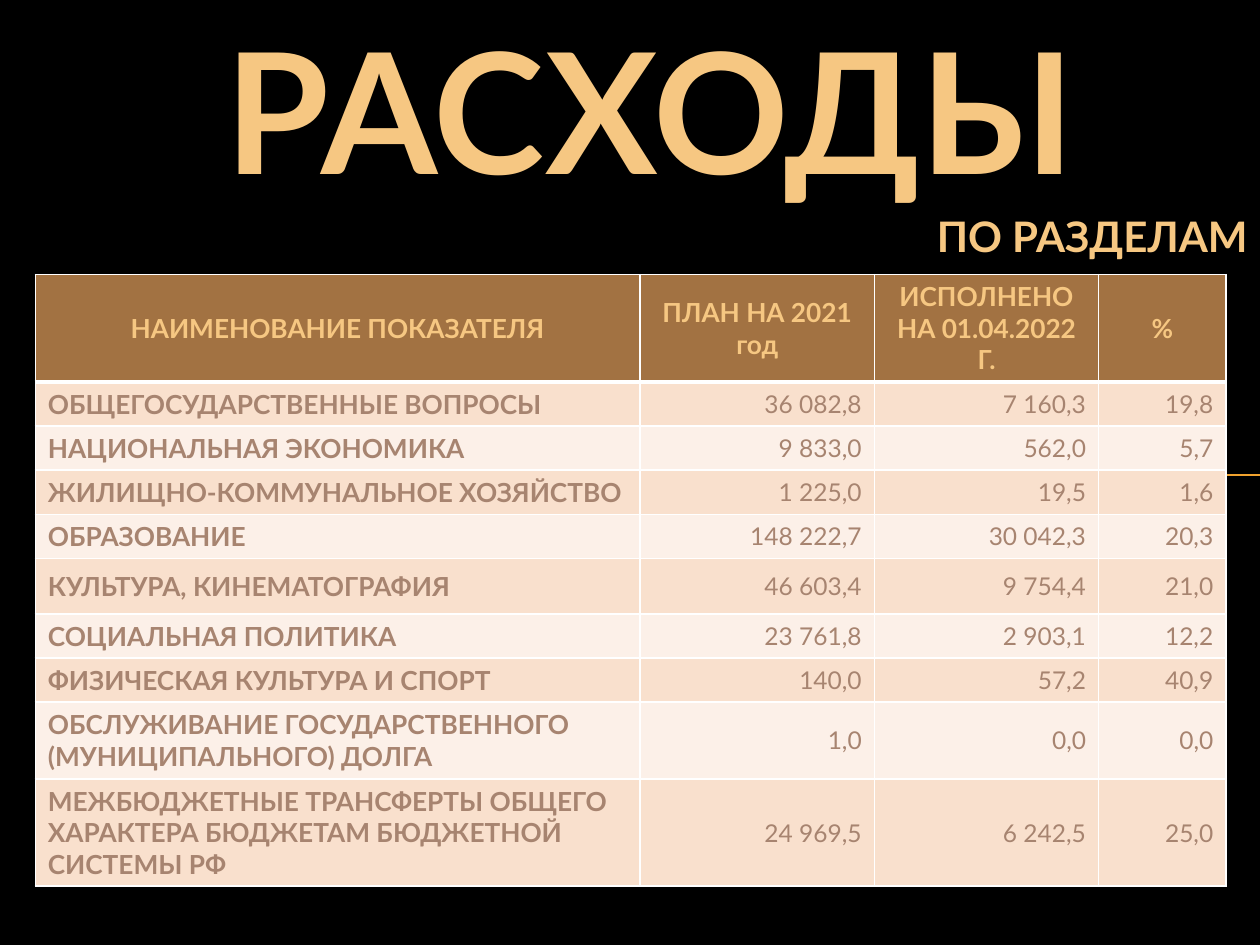
from dataclasses import dataclass

from lxml import etree
from pptx import Presentation
from pptx import util as u
from pptx.dml.color import RGBColor
from pptx.enum import shapes, text
from pptx.oxml.ns import qn


@dataclass(frozen=True)
class Theme:
    font: str = "Lato"
    background: str = "000000"
    gold: str = "F6C782"
    rule: str = "F0A22E"
    header: str = "A27242"
    body: str = "A78470"
    bands: tuple = ("F9E0CD", "FCF0E8")
    border: str = "FFFFFF"
    title_size: int = 96
    subtitle_size: int = 24
    label_size: int = 15
    value_size: int = 14


THEME = Theme()
ALIGN = text.PP_ALIGN

HEADINGS = ("НАИМЕНОВАНИЕ ПОКАЗАТЕЛЯ", "ПЛАН НА 2021 год",
            "ИСПОЛНЕНО НА 01.04.2022 Г.", "%")
EXPENSES = (
    ("ОБЩЕГОСУДАРСТВЕННЫЕ ВОПРОСЫ", "36 082,8", "7 160,3", "19,8"),
    ("НАЦИОНАЛЬНАЯ ЭКОНОМИКА", "9 833,0", "562,0", "5,7"),
    ("ЖИЛИЩНО-КОММУНАЛЬНОЕ ХОЗЯЙСТВО", "1 225,0", "19,5", "1,6"),
    ("ОБРАЗОВАНИЕ", "148 222,7", "30 042,3", "20,3"),
    ("КУЛЬТУРА, КИНЕМАТОГРАФИЯ", "46 603,4", "9 754,4", "21,0"),
    ("СОЦИАЛЬНАЯ ПОЛИТИКА", "23 761,8", "2 903,1", "12,2"),
    ("ФИЗИЧЕСКАЯ КУЛЬТУРА И СПОРТ", "140,0", "57,2", "40,9"),
    ("ОБСЛУЖИВАНИЕ ГОСУДАРСТВЕННОГО (МУНИЦИПАЛЬНОГО) ДОЛГА", "1,0", "0,0", "0,0"),
    ("МЕЖБЮДЖЕТНЫЕ ТРАНСФЕРТЫ ОБЩЕГО ХАРАКТЕРА БЮДЖЕТАМ БЮДЖЕТНОЙ СИСТЕМЫ РФ",
     "24 969,5", "6 242,5", "25,0"),
)
COLUMN_WIDTHS = (4.8, 1.86, 1.78, 1.01)
ROW_HEIGHTS = (0.84, 0.35, 0.35, 0.35, 0.35, 0.44, 0.35, 0.35, 0.61, 0.84)


def rgb(color):
    return RGBColor.from_string(color)


def write(frame, words, size, color, align, bold=True):
    paragraph = frame.paragraphs[0]
    paragraph.text = words
    paragraph.alignment = align
    font = paragraph.font
    font.name, font.size, font.bold = THEME.font, u.Pt(size), bold
    font.color.rgb = rgb(color)


def add_heading(slide, box, words, size, align):
    heading = slide.shapes.add_textbox(*map(u.Inches, box)).text_frame
    heading.word_wrap = True
    write(heading, words, size, THEME.gold, align)


def add_rule(slide, left, right, y):
    rule = slide.shapes.add_connector(
        shapes.MSO_CONNECTOR.STRAIGHT,
        u.Inches(left), u.Inches(y), u.Inches(right), u.Inches(y))
    rule.line.color.rgb = rgb(THEME.rule)
    rule.line.width = u.Pt(0.75)
    etree.SubElement(rule._element.spPr, qn("a:effectLst"))


def paint_cell(cell, fill, bottom_width):
    properties = cell._tc.get_or_add_tcPr()
    for side, width in (("L", 1), ("R", 1), ("T", 1), ("B", bottom_width)):
        border = etree.SubElement(properties, qn(f"a:ln{side}"), w=str(u.Pt(width)))
        solid = etree.SubElement(border, qn("a:solidFill"))
        etree.SubElement(solid, qn("a:srgbClr"), val=THEME.border)
    cell.fill.solid()
    cell.fill.fore_color.rgb = rgb(fill)
    cell.vertical_anchor = text.MSO_ANCHOR.MIDDLE


def add_expenses(slide, left, top):
    records = (HEADINGS, *EXPENSES)
    table = slide.shapes.add_table(
        len(records), len(HEADINGS), u.Inches(left), u.Inches(top),
        u.Inches(sum(COLUMN_WIDTHS)), u.Inches(sum(ROW_HEIGHTS))).table
    for column, width in zip(table.columns, COLUMN_WIDTHS):
        column.width = u.Inches(width)
    for index, (row, height, record) in enumerate(zip(table.rows, ROW_HEIGHTS, records)):
        row.height = u.Inches(height)
        is_header = index == 0
        fill = THEME.header if is_header else THEME.bands[(index - 1) % 2]
        for position, (cell, words) in enumerate(zip(row.cells, record)):
            paint_cell(cell, fill, 3 if is_header else 1)
            if is_header:
                style = THEME.label_size, THEME.gold, ALIGN.CENTER
            elif position == 0:
                style = THEME.label_size, THEME.body, ALIGN.LEFT
            else:
                style = THEME.value_size, THEME.body, ALIGN.RIGHT, False
            write(cell.text_frame, words, *style)


def main():
    deck = Presentation()
    deck.slide_width, deck.slide_height = u.Inches(10), u.Inches(7.5)
    slide = deck.slides.add_slide(deck.slide_layouts[6])
    slide.background.fill.solid()
    slide.background.fill.fore_color.rgb = rgb(THEME.background)
    add_rule(slide, 0.56, 10, 3.77)
    add_heading(slide, (0.91, 0, 8.5, 1.49), "РАСХОДЫ", THEME.title_size, ALIGN.CENTER)
    add_expenses(slide, 0.28, 2.18)
    add_heading(slide, (3.7, 1.62, 6.3, 0.5), "ПО РАЗДЕЛАМ",
                THEME.subtitle_size, ALIGN.RIGHT)
    deck.save("out.pptx")


if __name__ == "__main__":
    main()
